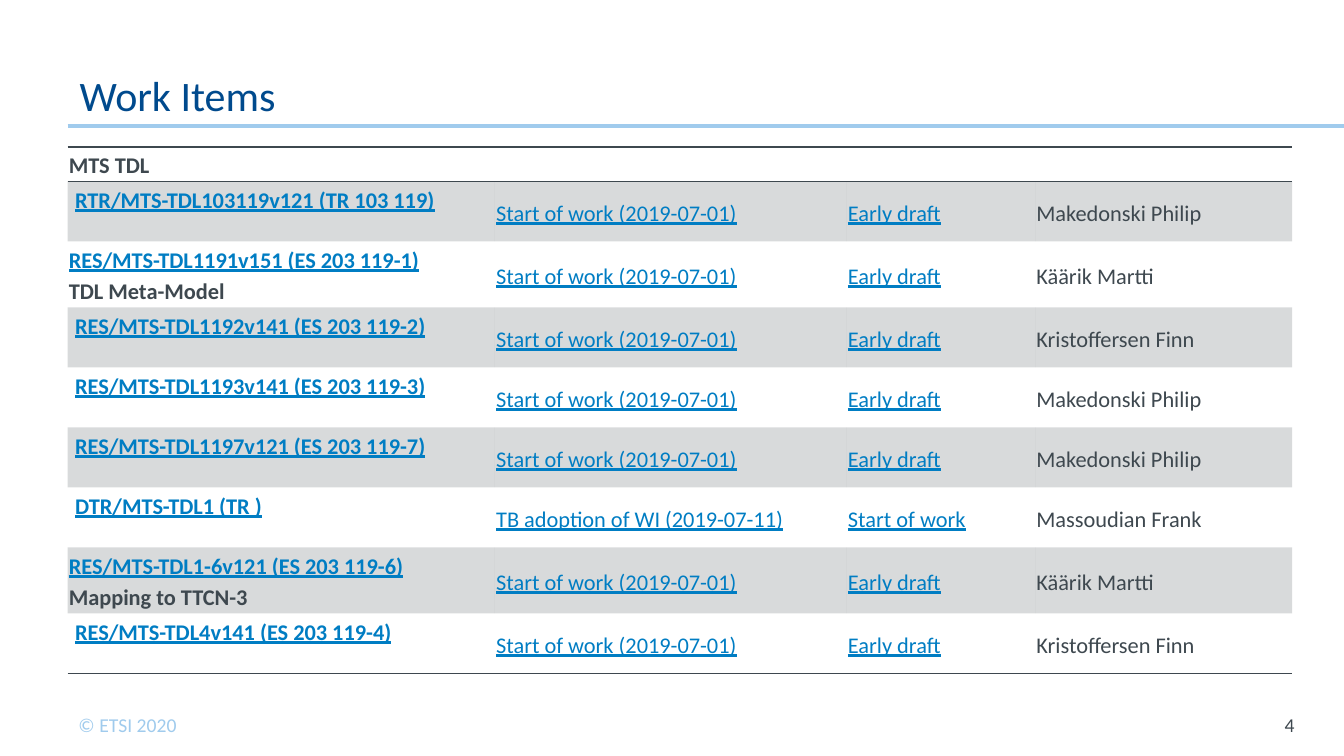
from lxml import etree
from pptx import Presentation
from pptx import util as u
from pptx.dml.color import RGBColor
from pptx.enum import shapes, text
from pptx.oxml.ns import qn

Pt = u.Pt
FONT = "Calibri"
NAVY = RGBColor(0x00, 0x4A, 0x8D)
LINK_BLUE = RGBColor(0x00, 0x7D, 0xC3)
PALE_BLUE = RGBColor(0xA0, 0xCB, 0xED)
SLATE = RGBColor(0x3E, 0x48, 0x4F)
PLAIN_TABLE_STYLE = "{2D5ABB26-0587-4C30-8999-92F81FD0307C}"

SLIDE_WIDTH, SLIDE_HEIGHT = 960, 540
MARGIN = 48.24
RULE_TOP = 90
COLUMN_WIDTHS = (305.3, 251.3, 134.6, 183.6)
HEADER_HEIGHT, ROW_HEIGHT, TALL_ROW_HEIGHT = 24.64, 42.86, 47.14
CELL_INSET = 0.9
LINK_INDENT = 4.5

START = "Start of work (2019-07-01)"
DRAFT = "Early draft"
# Work item, its subtitle, current status, next status, rapporteur
WORK_ITEMS = (
    ("RTR/MTS-TDL103119v121 (TR 103 119)", "", START, DRAFT, "Makedonski Philip"),
    ("RES/MTS-TDL1191v151 (ES 203 119-1)", "TDL Meta-Model", START, DRAFT, "Käärik Martti"),
    ("RES/MTS-TDL1192v141 (ES 203 119-2)", "", START, DRAFT, "Kristoffersen Finn"),
    ("RES/MTS-TDL1193v141 (ES 203 119-3)", "", START, DRAFT, "Makedonski Philip"),
    ("RES/MTS-TDL1197v121 (ES 203 119-7)", "", START, DRAFT, "Makedonski Philip"),
    ("DTR/MTS-TDL1 (TR )", "", "TB adoption of WI (2019-07-11)", "Start of work",
     "Massoudian Frank"),
    ("RES/MTS-TDL1-6v121 (ES 203 119-6)", "Mapping to TTCN-3", START, DRAFT, "Käärik Martti"),
    ("RES/MTS-TDL4v141 (ES 203 119-4)", "", START, DRAFT, "Kristoffersen Finn"),
)


def add_run(paragraph, words, size, color, bold=False, underline=False):
    run = paragraph.add_run()
    run.text = words
    font = run.font
    font.name, font.size, font.bold, font.underline = FONT, Pt(size), bold, underline
    font.color.rgb = color


def set_insets(target, left, top, right, bottom):
    target.margin_left, target.margin_top = Pt(left), Pt(top)
    target.margin_right, target.margin_bottom = Pt(right), Pt(bottom)


def add_heading(slide, left, top, width, height):
    title = slide.shapes.title
    title.left, title.top, title.width, title.height = map(Pt, (left, top, width, height))
    frame = title.text_frame
    frame.auto_size = text.MSO_AUTO_SIZE.NONE
    frame.vertical_anchor = text.MSO_ANCHOR.BOTTOM
    set_insets(frame, 8.64, 4.32, 8.64, 4.32)
    paragraph = frame.paragraphs[0]
    paragraph.alignment = text.PP_ALIGN.LEFT
    paragraph.line_spacing = Pt(30)
    add_run(paragraph, "Work Items", 30, NAVY)

    bottom = top + height
    rule = slide.shapes.add_connector(
        shapes.MSO_CONNECTOR.STRAIGHT, Pt(left), Pt(bottom), Pt(SLIDE_WIDTH), Pt(bottom))
    rule.line.color.rgb = PALE_BLUE
    rule.line.width = Pt(2.25)
    etree.SubElement(rule.element.spPr, qn("a:effectLst"))


def add_border(cell, side):
    """Draw a 1 pt rule on one side: lnT or lnB. Call before filling, top first."""
    line = etree.SubElement(cell._tc.get_or_add_tcPr(), qn(f"a:{side}"), w=str(Pt(1)))
    fill = etree.SubElement(line, qn("a:solidFill"))
    etree.SubElement(fill, qn("a:srgbClr"), val=str(SLATE))


def fill_cell(cell, shaded):
    if not shaded:
        cell.fill.background()
        return
    cell.fill.solid()
    cell.fill.fore_color.rgb = SLATE
    color = cell._tc.tcPr.find(f".//{qn('a:solidFill')}[last()]/{qn('a:srgbClr')}")
    etree.SubElement(color, qn("a:alpha"), val="20000")


def start_cell(cell, left_inset=CELL_INSET, anchor=text.MSO_ANCHOR.MIDDLE):
    set_insets(cell, left_inset, CELL_INSET, CELL_INSET, CELL_INSET)
    cell.vertical_anchor = anchor
    paragraph = cell.text_frame.paragraphs[0]
    paragraph.line_spacing = 1.15
    return paragraph


def write_work_item(row, item, subtitle, status, next_status, rapporteur):
    indent = 0 if subtitle else LINK_INDENT
    paragraph = start_cell(row.cells[0], CELL_INSET + indent, text.MSO_ANCHOR.TOP)
    add_run(paragraph, item, 16, LINK_BLUE, bold=True, underline=True)
    if subtitle:
        paragraph.add_line_break()
        add_run(paragraph, subtitle, 16, SLATE, bold=True)
    for column, words in ((1, status), (2, next_status)):
        add_run(start_cell(row.cells[column]), words, 16, LINK_BLUE, underline=True)
    add_run(start_cell(row.cells[3]), rapporteur, 16, SLATE)


def add_work_items(slide, left, top):
    heights = [HEADER_HEIGHT] + [
        TALL_ROW_HEIGHT if item[1] else ROW_HEIGHT for item in WORK_ITEMS]
    graphic = slide.shapes.add_table(
        len(heights), len(COLUMN_WIDTHS), Pt(left), Pt(top),
        Pt(sum(COLUMN_WIDTHS)), Pt(sum(heights)))
    next(graphic.element.iter(qn("a:tableStyleId"))).text = PLAIN_TABLE_STYLE
    table = graphic.table
    for column, width in zip(table.columns, COLUMN_WIDTHS):
        column.width = Pt(width)
    for row, height in zip(table.rows, heights):
        row.height = Pt(height)

    header = table.cell(0, 0)
    header.merge(table.cell(0, len(COLUMN_WIDTHS) - 1))
    add_run(start_cell(header), "MTS TDL", 16, SLATE, bold=True)
    for number, item in enumerate(WORK_ITEMS, start=1):
        write_work_item(table.rows[number], *item)

    for number, row in enumerate(table.rows):
        for cell in row.cells:
            if number == 0:
                add_border(cell, "lnT")
            if number in (0, len(WORK_ITEMS)):
                add_border(cell, "lnB")
            fill_cell(cell, shaded=number % 2 == 1)


def add_footer_text(slide, words, color, alignment, left, top, width, height):
    frame = slide.shapes.add_textbox(*map(Pt, (left, top, width, height))).text_frame
    frame.word_wrap = True
    frame.vertical_anchor = text.MSO_ANCHOR.MIDDLE
    paragraph = frame.paragraphs[0]
    paragraph.alignment = alignment
    add_run(paragraph, words, 14, color)


def add_footer(slide, top, height):
    add_footer_text(slide, "© ETSI 2020", PALE_BLUE, text.PP_ALIGN.LEFT,
                    49, top, 96.5, height)
    add_footer_text(slide, "4", SLATE, text.PP_ALIGN.RIGHT, 882, top, 49.7, height)


def main():
    presentation = Presentation()
    presentation.slide_width, presentation.slide_height = Pt(SLIDE_WIDTH), Pt(SLIDE_HEIGHT)
    slide = presentation.slides.add_slide(presentation.slide_layouts[5])
    add_heading(slide, MARGIN, 21.6, 750.24, RULE_TOP - 21.6)
    add_work_items(slide, MARGIN, 105)
    add_footer(slide, 505.5, 24.5)
    presentation.save("out.pptx")


if __name__ == "__main__":
    main()
